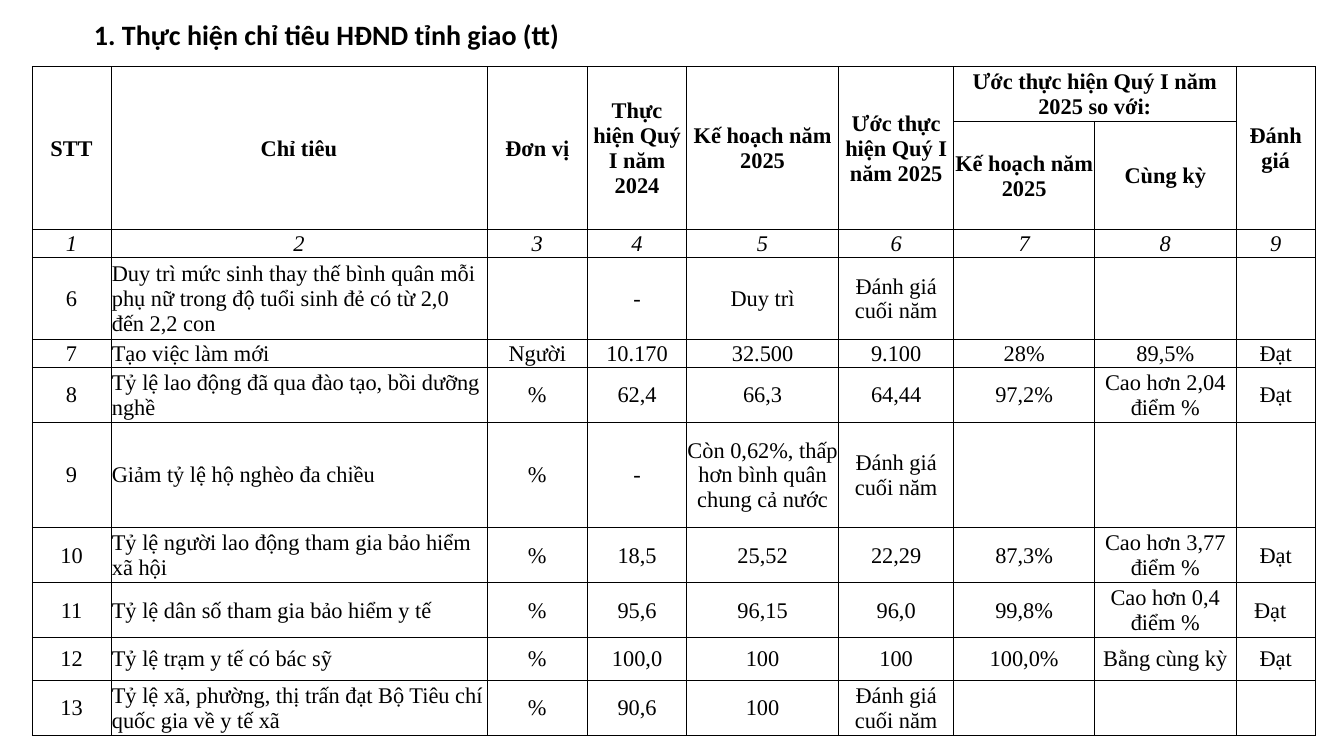
from dataclasses import dataclass

from lxml import etree
from pptx import Presentation
from pptx import util as u
from pptx.dml.color import RGBColor
from pptx.enum import text
from pptx.oxml import ns

BLACK = RGBColor(0x00, 0x00, 0x00)
WHITE = RGBColor(0xFF, 0xFF, 0xFF)
SLIDE_WIDTH = u.Inches(13.33)
SLIDE_HEIGHT = u.Inches(7.5)
CELL_INSET = 0.01
INDICATOR_COLUMN = 1

# Shares of the slide's size, in percent
COLUMN_SHARES = (5.85, 27.98, 7.5, 7.35, 11.33, 8.55, 10.5, 10.5, 5.93)


@dataclass(frozen=True)
class TableRow:
    height: float
    values: tuple[str, ...]
    bold: bool = False
    italic: bool = False
    rating_inset: float = CELL_INSET


@dataclass(frozen=True)
class Span:
    row: int
    column: int
    last_row: int
    last_column: int


ROWS = (
    TableRow(7.2, ("STT", "Chỉ tiêu", "Đơn vị", "Thực hiện Quý I năm 2024",
                   "Kế hoạch năm 2025", "Ước thực hiện Quý I năm 2025",
                   "Ước thực hiện Quý I năm 2025 so với:", "", "Đánh giá"), bold=True),
    TableRow(13.7, ("", "", "", "", "", "", "Kế hoạch năm 2025", "Cùng kỳ", ""), bold=True),
    TableRow(3.6, tuple(str(number) for number in range(1, 10)), italic=True),
    TableRow(10.8, ("6", "Duy trì mức sinh thay thế bình quân mỗi phụ nữ trong độ tuổi "
                    "sinh đẻ có từ 2,0 đến 2,2 con", "", "-", "Duy trì",
                    "Đánh giá cuối năm", "", "", "")),
    TableRow(3.6, ("7", "Tạo việc làm mới", "Người", "10.170", "32.500", "9.100",
                   "28%", "89,5%", "Đạt")),
    TableRow(7.2, ("8", "Tỷ lệ lao động đã qua đào tạo, bồi dưỡng nghề", "%", "62,4",
                   "66,3", "64,44", "97,2%", "Cao hơn 2,04 điểm %", "Đạt")),
    TableRow(14, ("9", "Giảm tỷ lệ hộ nghèo đa chiều", "%", "-",
                  "Còn 0,62%, thấp hơn bình quân chung cả nước",
                  "Đánh giá cuối năm", "", "", "")),
    TableRow(7.2, ("10", "Tỷ lệ người lao động tham gia bảo hiểm xã hội", "%", "18,5",
                   "25,52", "22,29", "87,3%", "Cao hơn 3,77 điểm %", "Đạt")),
    TableRow(7.2, ("11", "Tỷ lệ dân số tham gia bảo hiểm y tế", "%", "95,6", "96,15",
                   "96,0", "99,8%", "Cao hơn 0,4 điểm %", "Đạt"), rating_inset=0.12),
    TableRow(5.7, ("12", "Tỷ lệ trạm y tế có bác sỹ", "%", "100,0", "100", "100",
                   "100,0%", "Bằng cùng kỳ", "Đạt")),
    TableRow(7.2, ("13", "Tỷ lệ xã, phường, thị trấn đạt Bộ Tiêu chí quốc gia về y tế xã",
                   "%", "90,6", "100", "Đánh giá cuối năm", "", "", "")),
)

# Header cells span two rows, except the pair of comparison columns
SPANS = [Span(0, column, 1, column) for column in (0, 1, 2, 3, 4, 5, 8)]
SPANS.append(Span(0, 6, 0, 7))


def across(percent: float) -> int:
    return round(SLIDE_WIDTH * percent / 100)


def down(percent: float) -> int:
    return round(SLIDE_HEIGHT * percent / 100)


def write_text(frame, content: str, *, font: str, size: float, bold: bool = False,
               italic: bool = False, align=text.PP_ALIGN.LEFT) -> None:
    frame.word_wrap = True
    paragraph = frame.paragraphs[0]
    paragraph.alignment = align
    if not content:
        return
    run = paragraph.add_run()
    run.text = content
    run.font.name = font
    run.font.size = u.Pt(size)
    run.font.bold = bold
    run.font.italic = italic
    run.font.color.rgb = BLACK


def add_borders(cell, width: float = 0.5) -> None:
    properties = cell._tc.get_or_add_tcPr()
    for index, side in enumerate(("a:lnL", "a:lnR", "a:lnT", "a:lnB")):
        line = etree.Element(ns.qn(side), w=str(u.Pt(width)))
        fill = etree.SubElement(line, ns.qn("a:solidFill"))
        etree.SubElement(fill, ns.qn("a:srgbClr"), val=str(BLACK))
        properties.insert(index, line)


def draw_row(table, index: int, row: TableRow) -> None:
    table.rows[index].height = down(row.height)
    for column, value in enumerate(row.values):
        cell = table.cell(index, column)
        cell.margin_left = cell.margin_right = cell.margin_top = u.Inches(CELL_INSET)
        cell.margin_bottom = 0
        if column == len(row.values) - 1:
            cell.margin_right = u.Inches(row.rating_inset)
        cell.vertical_anchor = text.MSO_ANCHOR.MIDDLE
        cell.fill.background()
        add_borders(cell)
        is_indicator = column == INDICATOR_COLUMN and not (row.bold or row.italic)
        align = text.PP_ALIGN.LEFT if is_indicator else text.PP_ALIGN.CENTER
        write_text(cell.text_frame, value, font="Times New Roman", size=16,
                   bold=row.bold, italic=row.italic, align=align)


def draw_table(slide) -> None:
    frame = slide.shapes.add_table(
        len(ROWS), len(COLUMN_SHARES), across(2.4), down(8.8),
        across(sum(COLUMN_SHARES)), down(sum(row.height for row in ROWS)))
    table = frame.table
    table.first_row = False
    table.horz_banding = False
    for column, share in zip(table.columns, COLUMN_SHARES):
        column.width = across(share)
    for index, row in enumerate(ROWS):
        draw_row(table, index, row)
    for span in SPANS:
        table.cell(span.row, span.column).merge(
            table.cell(span.last_row, span.last_column))


def main() -> None:
    presentation = Presentation()
    presentation.slide_width = SLIDE_WIDTH
    presentation.slide_height = SLIDE_HEIGHT
    slide = presentation.slides.add_slide(presentation.slide_layouts[6])
    slide.background.fill.solid()
    slide.background.fill.fore_color.rgb = WHITE

    # Title
    title = slide.shapes.add_textbox(across(6.25), down(1.6), across(61.36), down(5.87))
    write_text(title.text_frame, "1. Thực hiện chỉ tiêu HĐND tỉnh giao (tt)",
               font="Calibri", size=20, bold=True)

    # Indicator table
    draw_table(slide)
    presentation.save("out.pptx")


if __name__ == "__main__":
    main()
